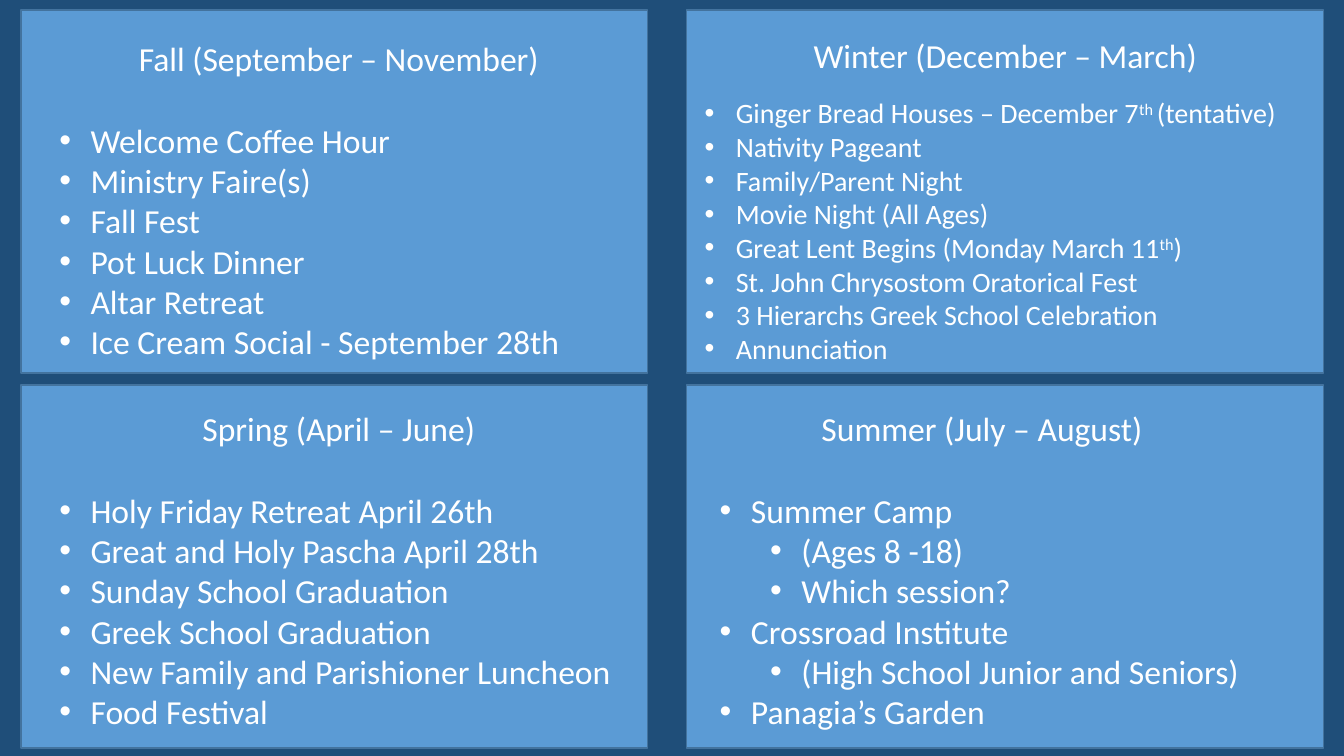
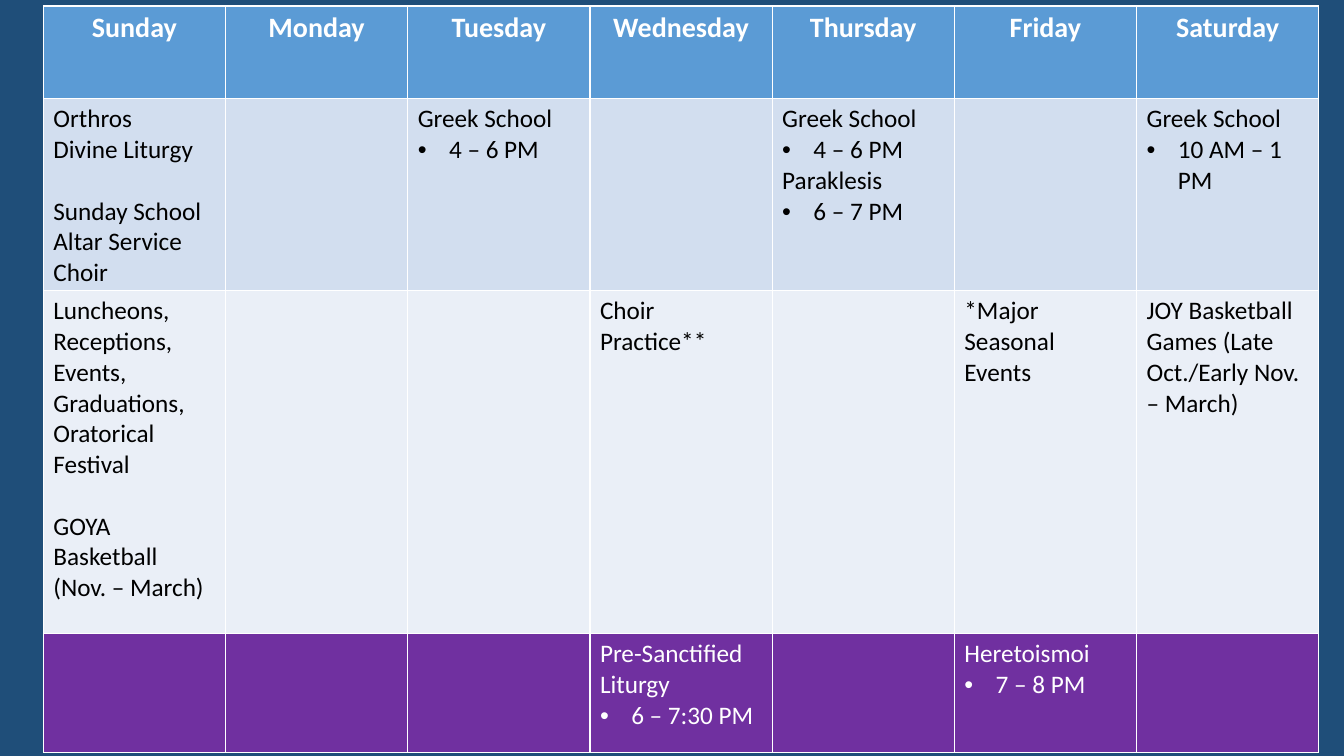
from collections import namedtuple

from lxml import etree
from pptx import Presentation
from pptx.dml.color import RGBColor
from pptx.enum import shapes, text
from pptx.oxml import ns
from pptx.util import Inches, Pt

NAVY = RGBColor(0x1F, 0x4E, 0x79)
BLUE = RGBColor(0x5B, 0x9B, 0xD5)
EDGE = RGBColor(0x43, 0x73, 0x9E)
PALE = RGBColor(0xD2, 0xDE, 0xEF)
PALER = RGBColor(0xEA, 0xEF, 0xF7)
PURPLE = RGBColor(0x70, 0x30, 0xA0)
WHITE = RGBColor(0xFF, 0xFF, 0xFF)
BLACK = RGBColor(0, 0, 0)
FONT = "Calibri"
INDENT = 0.31
SUB_INDENT = 0.5
LINE_HEIGHT = 1.22  # share of the font size

# level: 0 plain, 1 bullet, 2 sub-bullet; gap: points left below the line
Line = namedtuple("Line", "text level gap", defaults=(0, 0))


def bullets(*items, level=1):
    return [Line(item, level) for item in items]


# Season panels; ^ marks the start and end of a superscript
PANEL_COLUMNS = [(0.21, 6.21), (6.81, 6.32)]  # left, width
PANEL_TOPS = [0.1, 3.82]
PANEL_HEIGHT = 3.6
Season = namedtuple("Season", "title column row box size gap items")
SEASONS = [
    Season("Fall (September – November)", 0, 0, (0.49, 0.33, 5.74, 3.33), 24, 24, bullets(
        "Welcome Coffee Hour", "Ministry Faire(s)", "Fall Fest", "Pot Luck Dinner",
        "Altar Retreat", "Ice Cream Social - September 28th")),
    Season("Winter (December – March)", 1, 0, (6.89, 0.3, 6.16, 3.4), 20, 12, bullets(
        "Ginger Bread Houses – December 7^th ^(tentative)", "Nativity Pageant",
        "Family/Parent Night", "Movie Night (All Ages)",
        "Great Lent Begins (Monday March 11^th^)", "St. John Chrysostom Oratorical Fest",
        "3 Hierarchs Greek School Celebration", "Annunciation")),
    Season("Spring (April – June)", 0, 1, (0.49, 4, 5.74, 3.33), 24, 24, bullets(
        "Holy Friday Retreat April 26th", "Great and Holy Pascha April 28th",
        "Sunday School Graduation", "Greek School Graduation",
        "New Family and Parishioner Luncheon", "Food Festival")),
    Season("Summer (July – August)", 1, 1, (7.04, 4, 5.4, 3.33), 24, 24,
           bullets("Summer Camp")
           + bullets("(Ages 8 -18)", "Which session?", level=2)
           + bullets("Crossroad Institute")
           + bullets("(High School Junior and Seniors)", level=2)
           + bullets("Panagia’s Garden")),
]

# Weekly calendar: height, fill, font colour, {day: lines}
DAYS = ["Sunday", "Monday", "Tuesday", "Wednesday", "Thursday", "Friday", "Saturday"]
CALENDAR_BOX = (0.43, 0.06, 12.65, 7.4)
HEADER_HEIGHT = 0.92
BODY_SIZE = 18
BLANK_LINE = BODY_SIZE * LINE_HEIGHT
WEEK_ROWS = [
    (1.9, PALE, BLACK, {
        "Sunday": [Line("Orthros"), Line("Divine Liturgy", gap=BLANK_LINE),
                   Line("Sunday School"), Line("Altar Service"), Line("Choir")],
        "Tuesday": [Line("Greek School"), Line("4 – 6 PM", 1)],
        "Thursday": [Line("Greek School"), Line("4 – 6 PM", 1),
                     Line("Paraklesis"), Line("6 – 7 PM", 1)],
        "Saturday": [Line("Greek School"), Line("10 AM – 1 PM", 1)],
    }),
    (3.4, PALER, BLACK, {
        "Sunday": [Line("Luncheons, Receptions, Events, Graduations, Oratorical Festival",
                        gap=BLANK_LINE),
                   Line("GOYA Basketball (Nov. – March)")],
        "Wednesday": [Line("Choir Practice**")],
        "Friday": [Line("*Major Seasonal Events")],
        "Saturday": [Line("JOY Basketball Games (Late Oct./Early Nov. – March)")],
    }),
    (1.18, PURPLE, WHITE, {
        "Wednesday": [Line("Pre-Sanctified Liturgy"), Line("6 – 7:30 PM", 1)],
        "Friday": [Line("Heretoismoi"), Line("7 – 8 PM", 1)],
    }),
]


def inches(box):
    return [Inches(length) for length in box]


def add_bullet(paragraph, level):
    paragraph.level = level - 1
    props = paragraph._p.get_or_add_pPr()
    props.set("marL", str(Inches(INDENT + SUB_INDENT * (level - 1))))
    props.set("indent", str(-Inches(INDENT)))
    etree.SubElement(props, ns.qn("a:buFont")).set("typeface", "Arial")
    etree.SubElement(props, ns.qn("a:buChar")).set("char", "•")


def write_line(paragraph, line, size, colour, bold=False, centred=False):
    for i, part in enumerate(line.text.split("^")):
        run = paragraph.add_run()
        run.text = part
        if i % 2:
            run._r.get_or_add_rPr().set("baseline", "30000")
    font = paragraph.font
    font.name, font.size, font.bold = FONT, Pt(size), bold
    font.color.rgb = colour
    if centred:
        paragraph.alignment = text.PP_ALIGN.CENTER
    if line.gap:
        paragraph.space_after = Pt(line.gap)
    if line.level:
        add_bullet(paragraph, line.level)


def write_lines(frame, lines, size, colour):
    for i, line in enumerate(lines):
        paragraph = frame.add_paragraph() if i else frame.paragraphs[0]
        write_line(paragraph, line, size, colour)


def fill_cell(cell, colour):
    cell.fill.solid()
    cell.fill.fore_color.rgb = colour


def add_season(slide, season):
    left, width = PANEL_COLUMNS[season.column]
    panel = slide.shapes.add_shape(
        shapes.MSO_SHAPE.RECTANGLE,
        *inches((left, PANEL_TOPS[season.row], width, PANEL_HEIGHT)))
    panel.shadow.inherit = False
    panel.fill.solid()
    panel.fill.fore_color.rgb = BLUE
    panel.line.color.rgb = EDGE
    panel.line.width = Pt(1)

    frame = slide.shapes.add_textbox(*inches(season.box)).text_frame
    frame.word_wrap = True
    title = Line(season.title, gap=season.gap * LINE_HEIGHT)
    write_line(frame.paragraphs[0], title, 24, WHITE, centred=True)
    for item in season.items:
        write_line(frame.add_paragraph(), item, season.size, WHITE)


def add_calendar(slide):
    calendar = slide.shapes.add_table(
        len(WEEK_ROWS) + 1, len(DAYS), *inches(CALENDAR_BOX)).table
    calendar.rows[0].height = Inches(HEADER_HEIGHT)
    for column, day in enumerate(DAYS):
        header = calendar.cell(0, column)
        fill_cell(header, BLUE)
        write_line(header.text_frame.paragraphs[0], Line(day), 20, WHITE,
                   bold=True, centred=True)
    for row, (height, fill, colour, events) in enumerate(WEEK_ROWS, 1):
        calendar.rows[row].height = Inches(height)
        for column, day in enumerate(DAYS):
            cell = calendar.cell(row, column)
            fill_cell(cell, fill)
            write_lines(cell.text_frame, events.get(day, []), BODY_SIZE, colour)


def main():
    deck = Presentation()
    deck.slide_width, deck.slide_height = Inches(13.33), Inches(7.5)
    backdrop = deck.slide_master.background.fill
    backdrop.solid()
    backdrop.fore_color.rgb = NAVY
    blank = deck.slide_layouts[6]

    # Seasons of the year
    seasons_slide = deck.slides.add_slide(blank)
    for season in SEASONS:
        add_season(seasons_slide, season)

    # Typical week
    add_calendar(deck.slides.add_slide(blank))
    deck.save("out.pptx")


if __name__ == "__main__":
    main()
